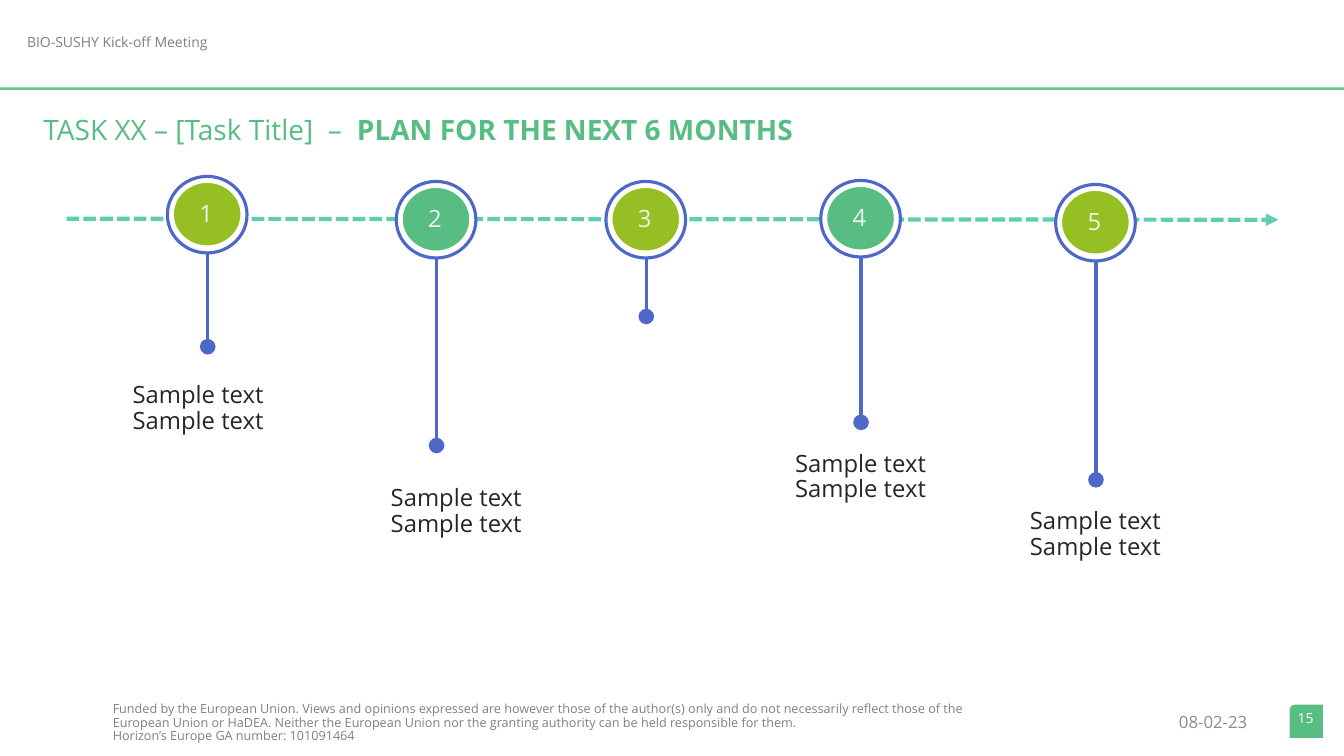
from dataclasses import dataclass

from lxml import etree
from pptx import Presentation
from pptx import util as u
from pptx.dml.color import RGBColor
from pptx.enum import dml, shapes, text
from pptx.oxml.ns import qn

FONT = "Open Sans"
GREEN = RGBColor(0x57, 0xBD, 0x83)
LIME = RGBColor(0x96, 0xBF, 0x24)
TEAL = RGBColor(0x5D, 0xCE, 0xAF)
BLUE = RGBColor(0x4E, 0x67, 0xC8)
WHITE = RGBColor(0xFF, 0xFF, 0xFF)
NUMBER_COLOR = RGBColor(0xF2, 0xF2, 0xF2)
DARK = RGBColor(0x26, 0x26, 0x26)
GRAY = RGBColor(0x80, 0x80, 0x80)
DATE_GRAY = RGBColor(0x8C, 0x8C, 0x8C)

LEFT, CENTER, RIGHT = text.PP_ALIGN.LEFT, text.PP_ALIGN.CENTER, text.PP_ALIGN.RIGHT
TOP, MIDDLE = text.MSO_ANCHOR.TOP, text.MSO_ANCHOR.MIDDLE
LABEL_LINES = ("Sample text", "Sample text")


@dataclass(frozen=True)
class Box:
    left: float
    top: float
    width: float
    height: float

    def lengths(self) -> list:
        return [u.Inches(n) for n in (self.left, self.top, self.width, self.height)]


@dataclass(frozen=True)
class Label:
    box: Box
    lines: tuple
    size: float
    color: RGBColor
    align: text.PP_ALIGN = LEFT
    anchor: text.MSO_ANCHOR = TOP


@dataclass(frozen=True)
class Milestone:
    x: float
    ring_top: float
    stem_end: float
    label: Box | None = None


PAGE_LABELS = (
    Label(Box(0.17, 0.3, 3.64, 0.27), ("BIO-SUSHY Kick-off Meeting",), 10, GRAY),
    Label(Box(9.52, 7.02, 2.95, 0.3), ("08-02-23",), 12, DATE_GRAY, RIGHT, MIDDLE),
    Label(Box(1.02, 6.92, 8.95, 0.56), (
        "Funded by the European Union. Views and opinions expressed are however those of "
        "the author(s) only and do not necessarily reflect those of the European Union or "
        "HaDEA. Neither the European Union nor the granting authority can be held "
        "responsible for them.",
        "Horizon’s Europe GA number: 101091464"), 9, GRAY),
    Label(Box(12.73, 7.01, 0.44, 0.27), ("15",), 10, WHITE, CENTER),
)

MILESTONES = (
    Milestone(2.06, 1.75, 3.44, Box(0.66, 3.75, 2.61, 0.67)),
    Milestone(4.33, 1.8, 4.42, Box(3.22, 4.77, 2.61, 0.67)),
    Milestone(6.41, 1.8, 3.14),
    Milestone(8.54, 1.79, 4.19, Box(7.23, 4.43, 2.61, 0.67)),
    Milestone(10.87, 1.83, 4.76, Box(9.56, 5, 2.61, 0.67)),
)


def apply(target, values: dict) -> None:
    for name, value in values.items():
        setattr(target, name, value)


def format_run(run, size: float, color: RGBColor, bold: bool = False) -> None:
    apply(run.font, {"name": FONT, "size": u.Pt(size), "bold": bold})
    run.font.color.rgb = color


def add_label(slide, label: Label) -> None:
    frame = slide.shapes.add_textbox(*label.box.lengths()).text_frame
    apply(frame, {"word_wrap": True, "vertical_anchor": label.anchor})
    for index, line in enumerate(label.lines):
        paragraph = frame.add_paragraph() if index else frame.paragraphs[0]
        apply(paragraph, {"alignment": label.align, "line_spacing": 0.9})
        run = paragraph.add_run()
        run.text = line
        format_run(run, label.size, label.color)


def add_line(slide, start: tuple, end: tuple, color: RGBColor, width: float,
             tail: str = "", tail_size: str = "med"):
    points = [u.Inches(n) for n in (*start, *end)]
    connector = slide.shapes.add_connector(shapes.MSO_CONNECTOR.STRAIGHT, *points)
    connector.line.color.rgb = color
    connector.line.width = u.Pt(width)
    if tail:
        etree.SubElement(connector.line._get_or_add_ln(), qn("a:tailEnd"),
                         type=tail, w=tail_size, len=tail_size)
    etree.SubElement(connector._element.spPr, qn("a:effectLst"))
    return connector


def add_shape(slide, kind: shapes.MSO_SHAPE, box: Box, fill: RGBColor | None = None,
              line: RGBColor | None = None, width: float = 0, rotation: float = 0) -> None:
    shape = slide.shapes.add_shape(kind, *box.lengths())
    shape.shadow.inherit = False
    shape.rotation = rotation
    if fill is None:
        shape.fill.background()
    else:
        shape.fill.solid()
        shape.fill.fore_color.rgb = fill
    if line is None:
        shape.line.fill.background()
    else:
        shape.line.color.rgb = line
        shape.line.width = u.Pt(width)


def add_title(slide) -> None:
    title = slide.shapes.title
    names = ("left", "top", "width", "height")
    apply(title, dict(zip(names, Box(0.33, 1.1, 12.71, 0.44).lengths())))
    frame = title.text_frame
    apply(frame, {"word_wrap": True, "vertical_anchor": TOP,
                  "auto_size": text.MSO_AUTO_SIZE.NONE})
    paragraph = frame.paragraphs[0]
    apply(paragraph, {"alignment": LEFT, "line_spacing": 0.9})
    for words, bold in (("TASK XX – [Task Title]  –  ", False),
                        ("PLAN FOR THE NEXT 6 MONTHS", True)):
        run = paragraph.add_run()
        run.text = words
        format_run(run, 20, GREEN, bold)


def add_milestone(slide, number: int, milestone: Milestone) -> None:
    x, top = milestone.x, milestone.ring_top
    oval = shapes.MSO_SHAPE.OVAL
    add_line(slide, (x, top + 0.46), (x, milestone.stem_end), BLUE, 2.25, "oval", "lg")
    add_shape(slide, oval, Box(x - 0.37, top + 0.03, 0.73, 0.69),
              LIME if number % 2 else GREEN, WHITE, 5)
    add_label(slide, Label(Box(x - 0.38, top + 0.2, 0.73, 0.39), (str(number),),
                           17, NUMBER_COLOR, CENTER))
    add_shape(slide, oval, Box(x - 0.4, top, 0.79, 0.76), line=BLUE, width=2.25)
    if milestone.label:
        add_label(slide, Label(milestone.label, LABEL_LINES, 17, DARK, CENTER))


def main() -> None:
    presentation = Presentation()
    apply(presentation, {"slide_width": u.Inches(13.33), "slide_height": u.Inches(7.5)})
    slide = presentation.slides.add_slide(presentation.slide_layouts[5])
    add_title(slide)
    add_shape(slide, shapes.MSO_SHAPE.ROUND_1_RECTANGLE, Box(12.79, 6.99, 0.33, 0.33),
              GREEN, rotation=270)
    header_rule = add_line(slide, (0, 0.88), (13.33, 0.88), GREEN, 1.75)
    for color in header_rule.line._get_or_add_ln().iter(qn("a:srgbClr")):
        etree.SubElement(color, qn("a:alpha"), val="89000")
    for label in PAGE_LABELS:
        add_label(slide, label)
    timeline = add_line(slide, (0.66, 2.17), (12.68, 2.18), TEAL, 3, "triangle")
    timeline.line.dash_style = dml.MSO_LINE.SQUARE_DOT
    for number, milestone in enumerate(MILESTONES, 1):
        add_milestone(slide, number, milestone)
    presentation.save("out.pptx")


if __name__ == "__main__":
    main()
